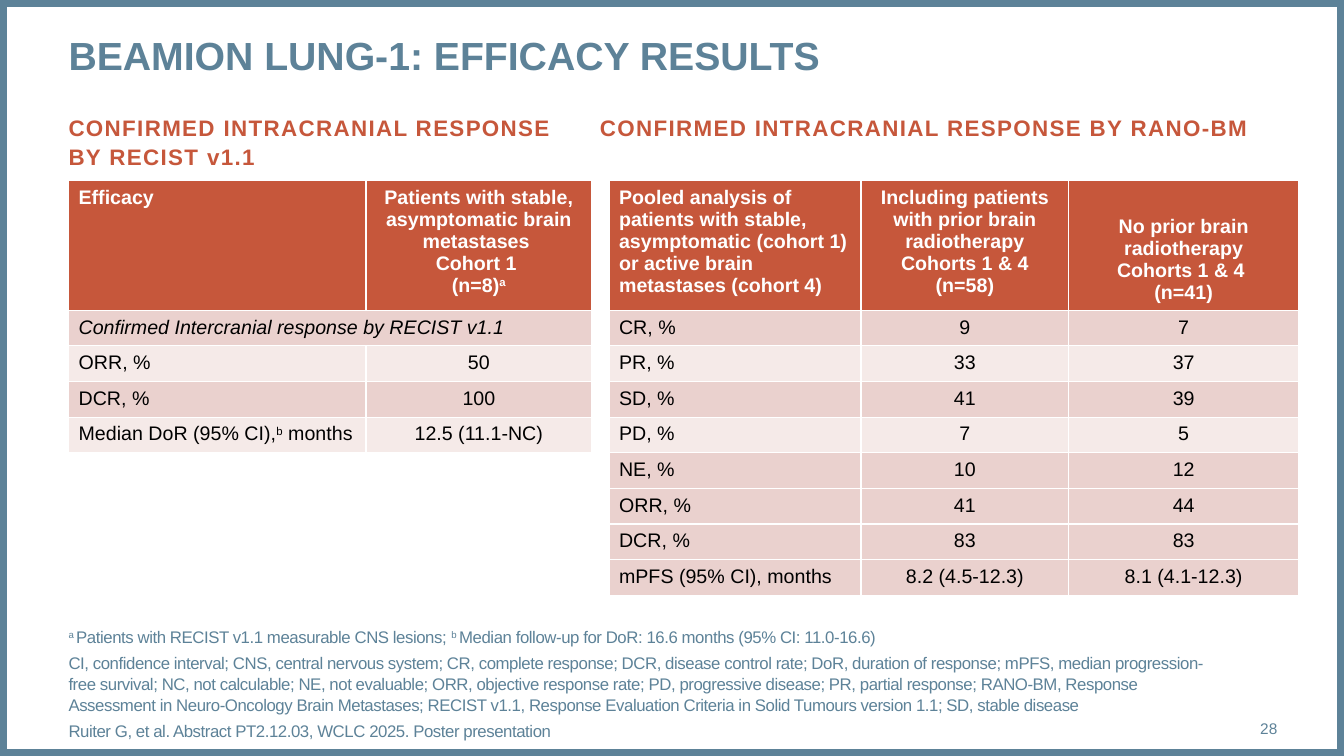
from pptx import Presentation
from pptx.dml.color import RGBColor
from pptx.enum.shapes import MSO_SHAPE
from pptx.enum.text import MSO_ANCHOR, PP_ALIGN
from pptx.util import Inches, Pt

STEEL = RGBColor(0x5D, 0x82, 0x98)
RUST = RGBColor(0xC6, 0x57, 0x3B)
BLUSH = RGBColor(0xEA, 0xD1, 0xCE)
PALE = RGBColor(0xF5, 0xEA, 0xE8)
WHITE = RGBColor(0xFF, 0xFF, 0xFF)
BLACK = RGBColor(0, 0, 0)
RECTANGLE = MSO_SHAPE.RECTANGLE
LEFT, CENTER, RIGHT = PP_ALIGN.LEFT, PP_ALIGN.CENTER, PP_ALIGN.RIGHT
TOP, MIDDLE, BOTTOM = MSO_ANCHOR.TOP, MSO_ANCHOR.MIDDLE, MSO_ANCHOR.BOTTOM

TITLE = {"size": Pt(28), "bold": True}
HEADING = {"size": Pt(16), "bold": True}
FOOTNOTE = {"size": Pt(12)}
NUMBER = {"size": Pt(11)}
HEADER_CELL = {"size": Pt(14), "bold": True}
BODY_CELL = {"size": Pt(14), "bold": False}
ITALIC_CELL = {"size": Pt(14), "bold": False, "italic": True}

RECIST_HEADER = [
    ["Efficacy"],
    ["Patients with stable, asymptomatic brain metastases ",
     "Cohort 1 \n(n=8)|a"],
]
RECIST_ROWS = [
    ["Confirmed Intercranial response by RECIST v1.1"],
    ["ORR, %", "50"],
    ["DCR, %", "100"],
    ["Median DoR (95% CI),|b| months", "12.5 (11.1-NC)"],
    [],
]
RANO_HEADER = [
    ["Pooled analysis of patients with stable, asymptomatic (cohort 1) "
     "or active brain metastases (cohort 4)"],
    ["Including patients with prior brain radiotherapy",
     "Cohorts 1 & 4 (n=58)"],
    ["No prior brain radiotherapy", "Cohorts 1 & 4 \n(n=41)"],
]
RANO_ROWS = [
    ["CR, %", "9", "7"],
    ["PR, %", "33", "37"],
    ["SD, %", "41", "39"],
    ["PD, %", "7", "5"],
    ["NE, %", "10", "12"],
    ["ORR, %", "41", "44"],
    ["DCR, %", "83", "83"],
    ["mPFS (95% CI), months", "8.2 (4.5-12.3)", "8.1 (4.1-12.3)"],
]
FOOTNOTES = [
    "|a |Patients with RECIST v1.1 measurable CNS lesions; |b |"
    "Median follow-up for DoR: 16.6 months (95% CI: 11.0-16.6)",
    "CI, confidence interval; CNS, central nervous system; CR, complete "
    "response; DCR, disease control rate; DoR, duration of response; mPFS, "
    "median progression-free survival; NC, not calculable; NE, not evaluable; "
    "ORR, objective response rate; PD, progressive disease; PR, partial "
    "response; RANO‑BM, Response Assessment in Neuro-Oncology Brain "
    "Metastases; RECIST v1.1, Response Evaluation Criteria in Solid Tumours "
    "version 1.1; SD, stable disease",
    "Ruiter G, et al. Abstract PT2.12.03, WCLC 2025. Poster presentation",
]


def add_run(paragraph, wording, style, color, tracking, raised):
    """Append one formatted run, raised when it is a superscript."""
    run = paragraph.add_run()
    run.text = wording
    for name, value in {"name": "Arial", **style}.items():
        setattr(run.font, name, value)
    run.font.color.rgb = color
    properties = run._r.get_or_add_rPr()
    if tracking:
        properties.set("spc", str(tracking))
    if raised:
        properties.set("baseline", "30000")


def write(frame, paragraphs, style, color, align=LEFT, tracking=0, gap=0,
          spacing=None):
    """Fill a frame; bars enclose superscripts and newlines break lines."""
    for index, wording in enumerate(paragraphs):
        paragraph = frame.add_paragraph() if index else frame.paragraphs[0]
        paragraph.alignment = align
        paragraph.line_spacing = spacing
        if index:
            paragraph.space_before = Pt(gap)
        for row, line in enumerate(wording.split("\n")):
            if row:
                paragraph.add_line_break()
            for part, piece in enumerate(line.split("|")):
                if piece:
                    add_run(paragraph, piece, style, color, tracking, part % 2)


def add_label(slide, box, paragraphs, style, color, anchor=TOP, inset=0,
              **layout):
    """Place a wrapped text box in the given box."""
    frame = slide.shapes.add_textbox(*map(Inches, box)).text_frame
    settings = {"word_wrap": True, "vertical_anchor": anchor,
                "margin_left": 0, "margin_right": 0,
                "margin_top": Inches(inset), "margin_bottom": Inches(inset)}
    for name, value in settings.items():
        setattr(frame, name, value)
    write(frame, paragraphs, style, color, **layout)


def fill_cell(cell, paragraphs, style, color, fill, align, anchor=TOP):
    """Colour one table cell and write its text."""
    cell.fill.solid()
    cell.fill.fore_color.rgb = fill
    cell.vertical_anchor = anchor
    cell.margin_top = cell.margin_bottom = Inches(0.06)
    write(cell.text_frame, paragraphs, style, color, align)


def add_results(slide, left, top, widths, header, rows, bands, last_anchor):
    """Place a response table; short rows span the full width."""
    header_height, row_height = 1.21, 0.34
    size = (sum(widths), header_height + row_height * len(rows))
    table = slide.shapes.add_table(
        len(rows) + 1, len(widths), *map(Inches, (left, top, *size))).table
    table.horz_banding = False
    for column, width in zip(table.columns, widths):
        column.width = Inches(width)
    for index, row in enumerate(table.rows):
        row.height = Inches(row_height if index else header_height)
    for column, paragraphs in enumerate(header):
        anchor = last_anchor if column == len(widths) - 1 else TOP
        fill_cell(table.cell(0, column), paragraphs, HEADER_CELL, WHITE, RUST,
                  CENTER if column else LEFT, anchor)
    for index, (values, band) in enumerate(zip(rows, bands), 1):
        spanning = len(values) < len(widths)
        if spanning:
            table.cell(index, 0).merge(table.cell(index, len(widths) - 1))
        if not values:
            for column in range(len(widths)):
                table.cell(index, column).fill.background()
        for column, value in enumerate(values):
            fill_cell(table.cell(index, column), [value],
                      ITALIC_CELL if spanning else BODY_CELL, BLACK, band,
                      CENTER if column else LEFT)


def add_frame(slide, width, height):
    """Outline the slide edge."""
    border = slide.shapes.add_shape(RECTANGLE, 0, 0, width, height)
    border.shadow.inherit = False
    border.fill.background()
    border.line.color.rgb = STEEL
    border.line.width = Pt(10)


def add_footer(slide, left, top):
    """Place the footnotes and the page number."""
    add_label(slide, (left, top, 11.34, 0.4), FOOTNOTES, FOOTNOTE, STEEL,
              BOTTOM, tracking=-30, gap=3, spacing=1.06)
    add_label(slide, (left + 11.13, top + 0.08, 0.86, 0.4), ["28"], NUMBER,
              STEEL, MIDDLE, align=RIGHT)


def main():
    """Build the efficacy results slide."""
    deck = Presentation()
    deck.slide_width, deck.slide_height = Inches(13.33), Inches(7.5)
    slide = deck.slides.add_slide(deck.slide_layouts[6])
    add_frame(slide, deck.slide_width, deck.slide_height)
    add_label(slide, (0.68, 0.28, 11.99, 0.94),
              ["BEAMION LUNG-1: EFFICACY RESULTS"], TITLE, STEEL, spacing=1.06)
    for left, width, height, measure in ((0.68, 5.04, 0.64, "RECIST v1.1"),
                                         (5.95, 6.93, 0.37, "RANO-BM")):
        add_label(slide, (left, 1.07, width, height),
                  [f"CONFIRMED INTRACRANIAL RESPONSE BY {measure}"], HEADING,
                  RUST, inset=0.05, tracking=100, spacing=1.06)
    add_results(slide, 0.68, 1.79, (2.95, 2.24), RECIST_HEADER, RECIST_ROWS,
                (BLUSH, PALE) * 3, TOP)
    add_results(slide, 6.04, 1.79, (2.5, 2.06, 2.28), RANO_HEADER, RANO_ROWS,
                (BLUSH, PALE) * 2 + (BLUSH,) * 4, BOTTOM)
    add_footer(slide, 0.68, 6.95)
    deck.save("out.pptx")


if __name__ == "__main__":
    main()
